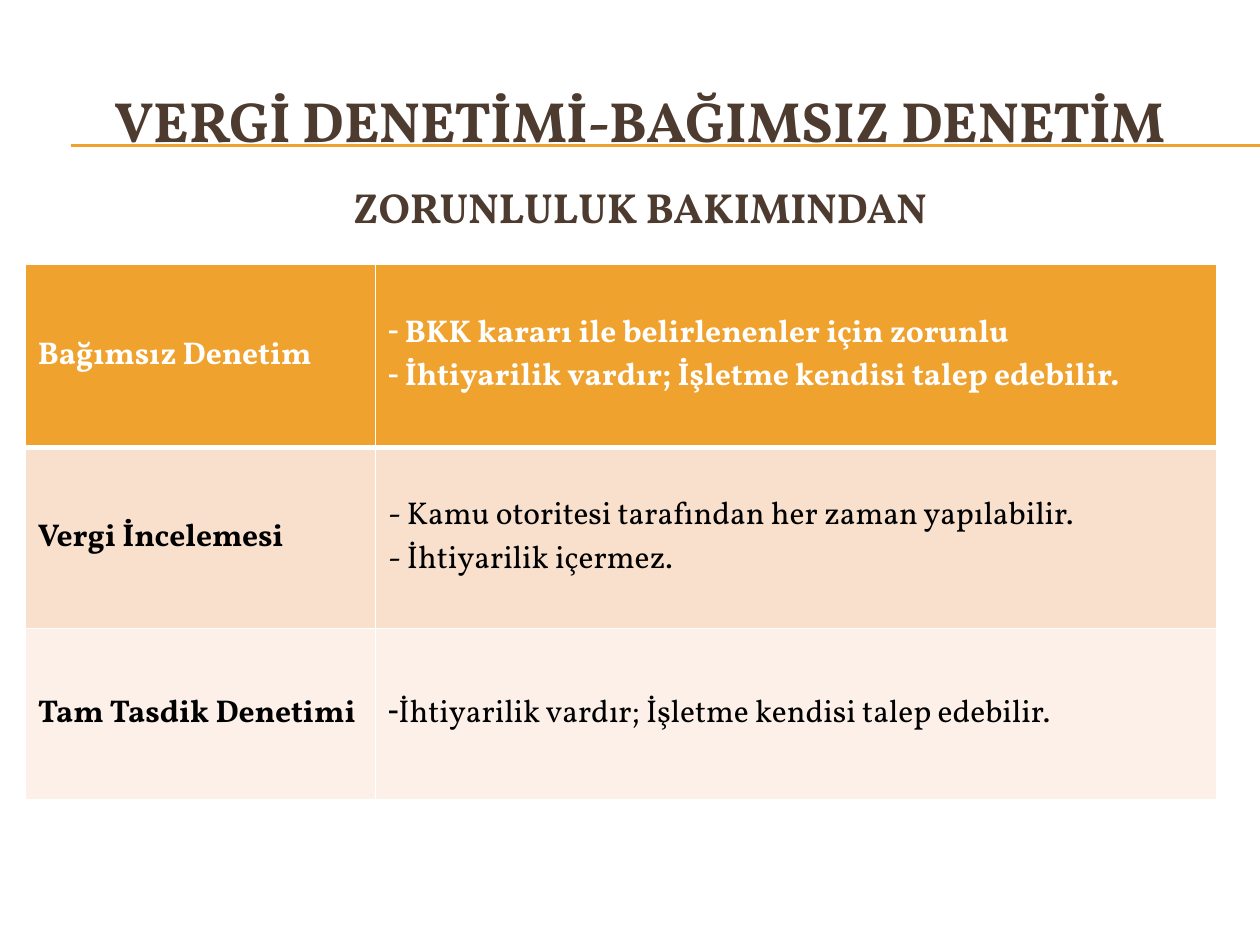
import pptx
import pptx.dml.color
import pptx.enum.shapes
import pptx.enum.text
import pptx.oxml
import pptx.oxml.ns
import pptx.util

COLORS = {
    "accent": "F0A22E",
    "heading": "4E3B30",
    "white": "FFFFFF",
    "black": "000000",
    "band_dark": "F9E0CD",
    "band_light": "FCF0E8",
}
FONT = "Vollkorn"
ALIGN = pptx.enum.text.PP_ALIGN
ANCHOR = pptx.enum.text.MSO_ANCHOR
WIDTH, HEIGHT = pptx.util.Inches(10), pptx.util.Inches(7.5)


def color(name):
    return pptx.dml.color.RGBColor.from_string(COLORS[name])


def xml(tag, body="", **attributes):
    listed = "".join(f' {key}="{value}"' for key, value in attributes.items())
    namespace = pptx.oxml.ns.nsdecls("a")
    return pptx.oxml.parse_xml(f"<a:{tag} {namespace}{listed}>{body}</a:{tag}>")


def write(paragraph, text, size=18, ink="black", bold=False, align=None, bullet=None):
    paragraph.alignment = align
    run = paragraph.add_run()
    run.text = text
    run.font.name = FONT
    run.font.size = pptx.util.Pt(size)
    run.font.bold = bold
    run.font.color.rgb = color(ink)
    if bullet:
        properties = paragraph._p.get_or_add_pPr()
        properties.set("marL", "0")
        properties.set("indent", "0")
        properties.append(xml("buFontTx"))
        properties.append(xml("buChar", char=bullet))


def set_borders(cell, bottom):
    """White lines of 1 pt on all sides, with the bottom one given in points."""
    properties = cell._tc.get_or_add_tcPr()
    fill = f'<a:solidFill><a:srgbClr val="{COLORS["white"]}"/></a:solidFill>'
    sides = {"lnL": 1, "lnR": 1, "lnT": 1, "lnB": bottom}
    for position, (side, points) in enumerate(sides.items()):
        properties.insert(position, xml(side, fill, w=pptx.util.Pt(points)))


class SlideBuilder:
    """Places elements by shares of the slide's width and height."""

    def __init__(self, slide):
        self.slide = slide

    def box(self, left, top, width, height):
        return [round(share * full) for share, full in
                zip((left, top, width, height), (WIDTH, HEIGHT) * 2)]

    def rule(self, left, right, height):
        x1, y1, x2, y2 = self.box(left, height, right, height)
        line = self.slide.shapes.add_connector(
            pptx.enum.shapes.MSO_CONNECTOR.STRAIGHT, x1, y1, x2, y2)
        line.line.color.rgb = color("accent")
        line.line.width = pptx.util.Pt(0.75)
        line._element.spPr.append(xml("effectLst"))

    def text(self, text, area, anchor=ANCHOR.TOP, **style):
        frame = self.slide.shapes.add_textbox(*self.box(*area)).text_frame
        frame.word_wrap = True
        frame.vertical_anchor = anchor
        write(frame.paragraphs[0], text, ink="heading", bold=True,
              align=ALIGN.CENTER, **style)

    def table(self, rows, area, columns, heights, fills):
        """Columns and heights are inches; each row is a label and its lines."""
        shape = self.slide.shapes.add_table(len(rows), len(columns), *self.box(*area))
        table = shape.table
        for column, width in zip(table.columns, columns):
            column.width = pptx.util.Inches(width)
        for row, height in zip(table.rows, heights):
            row.height = pptx.util.Inches(height)
        for index, (label, bullet, lines) in enumerate(rows):
            header = index == 0
            ink = "white" if header else "black"
            label_cell, lines_cell = table.rows[index].cells
            for cell in (label_cell, lines_cell):
                cell.vertical_anchor = ANCHOR.MIDDLE
                cell.fill.solid()
                cell.fill.fore_color.rgb = color(fills[index])
                set_borders(cell, bottom=3 if header else 1)
            write(label_cell.text_frame.paragraphs[0], label, ink=ink, bold=True)
            frame = lines_cell.text_frame
            for number, line in enumerate(lines):
                paragraph = frame.add_paragraph() if number else frame.paragraphs[0]
                write(paragraph, line, ink=ink, bold=header, bullet=bullet)


def main():
    presentation = pptx.Presentation()
    presentation.slide_width, presentation.slide_height = WIDTH, HEIGHT
    builder = SlideBuilder(presentation.slides.add_slide(presentation.slide_layouts[6]))

    for inches in (1.15, 1.16):
        builder.rule(0.056, 1, inches / 7.5)
    builder.text("VERGİ DENETİMİ-BAĞIMSIZ DENETİM", (0.033, 0.49 / 7.5, 0.95, 0.92 / 7.5),
                 anchor=ANCHOR.MIDDLE, size=32.4)
    builder.text("ZORUNLULUK BAKIMINDAN", (0.033, 1.39 / 7.5, 0.95, 5.26 / 7.5), size=24)
    builder.table(
        [
            ("Bağımsız Denetim", "-", [
                " BKK kararı ile belirlenenler için zorunlu",
                " İhtiyarilik vardır; İşletme kendisi talep edebilir."]),
            ("Vergi İncelemesi", None, [
                "- Kamu otoritesi tarafından her zaman yapılabilir.",
                "- İhtiyarilik içermez."]),
            ("Tam Tasdik Denetimi", "-", [
                "İhtiyarilik vardır; İşletme kendisi talep edebilir."]),
        ],
        area=(0.02, 0.28, 0.946, 4.25 / 7.5),
        columns=(2.78, 6.68),
        heights=(1.45, 1.44, 1.36),
        fills=("accent", "band_dark", "band_light"),
    )
    presentation.save("out.pptx")


if __name__ == "__main__":
    main()
